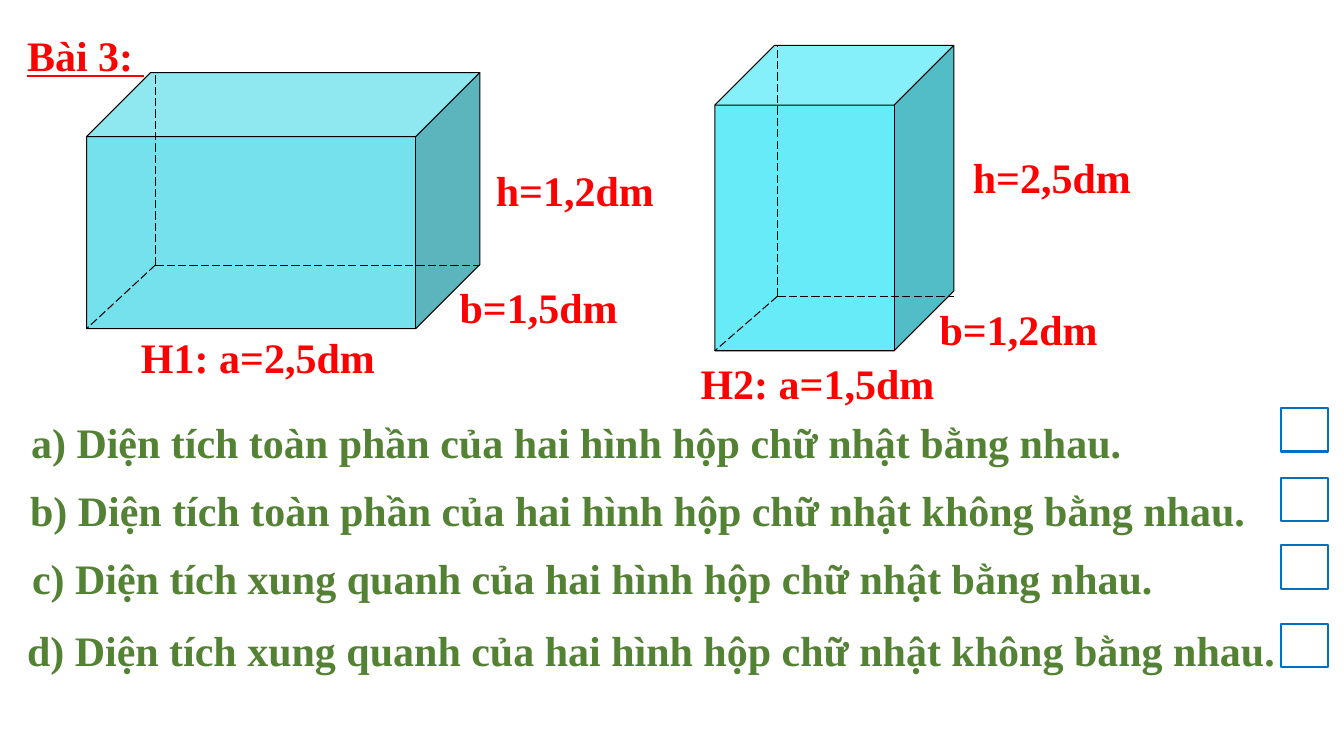
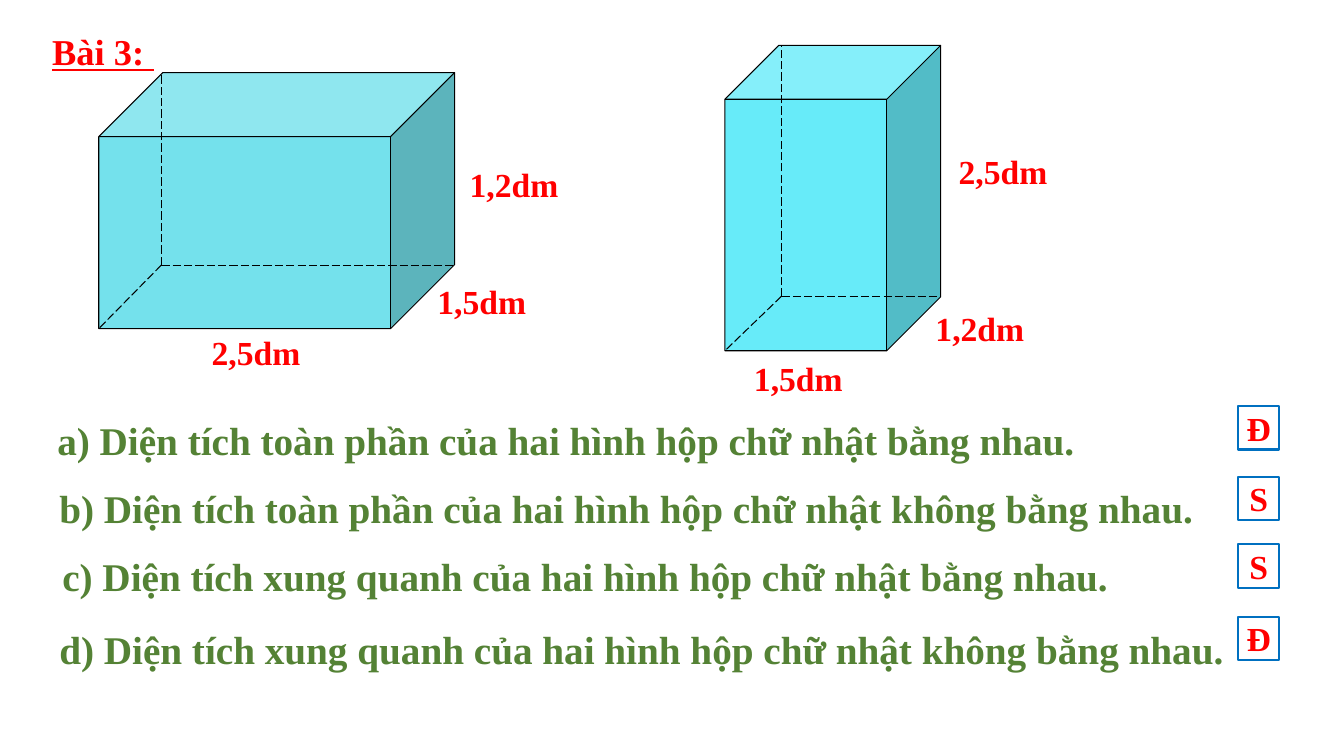
from dataclasses import dataclass

from lxml import etree
from pptx import Presentation
from pptx.dml.color import RGBColor
from pptx.enum import dml, shapes, text
from pptx.oxml import ns
from pptx.util import Inches, Pt

FONT = "Times New Roman"
RED, GREEN, BLUE, BLACK = "FF0000", "548235", "0070C0", "000000"
AQUA, CYAN = "74E1EC", "67EBF9"
INSET = 0.05
BOX_HEIGHT = 0.43

STATEMENTS = (
    "a) Diện tích toàn phần của hai hình hộp chữ nhật bằng nhau.",
    "b) Diện tích toàn phần của hai hình hộp chữ nhật không bằng nhau.",
    "c) Diện tích xung quanh của hai hình hộp chữ nhật bằng nhau.",
    "d) Diện tích xung quanh của hai hình hộp chữ nhật không bằng nhau.",
)
STATEMENT_TOPS = (4.08, 4.76, 5.43, 6.15)


@dataclass(frozen=True)
class Label:
    text: str
    left: float
    top: float
    width: float


@dataclass(frozen=True)
class Cuboid:
    left: float
    top: float
    width: float
    height: float
    fill: str
    hidden_x: float
    hidden_y: float
    labels: tuple[Label, ...]


@dataclass(frozen=True)
class Exercise:
    title: Label
    title_size: int
    label_size: int
    statement_size: int
    statement_lefts: tuple[float, ...]
    statement_width: float
    cuboids: tuple[Cuboid, ...]
    box_left: float
    box_width: float
    box_tops: tuple[float, ...]
    answers: tuple[str, ...]


QUESTION = Exercise(
    title=Label("Bài 3: ", 0.17, 0.24, 10.68),
    title_size=30,
    label_size=30,
    statement_size=30,
    statement_lefts=(0.21, 0.2, 0.22, 0.17),
    statement_width=12.7,
    cuboids=(
        Cuboid(7.09, 0.45, 2.37, 3.03, CYAN, 7.71, 2.94, (
            Label("h=2,5dm", 9.55, 1.45, 1.77),
            Label("H2: a=1,5dm", 6.85, 3.5, 2.93),
            Label("b=1,2dm", 9.22, 2.96, 2.03),
        )),
        Cuboid(0.86, 0.72, 3.9, 2.54, AQUA, 1.54, 2.63, (
            Label("h=1,2dm", 4.82, 1.58, 1.8),
            Label("H1: a=2,5dm", 1.3, 3.24, 2.85),
            Label("b=1,5dm", 4.46, 2.74, 1.91),
        )),
    ),
    box_left=12.71,
    box_width=0.46,
    box_tops=(4.05, 4.74, 5.41, 6.19),
    answers=("", "", "", ""),
)

SOLUTION = Exercise(
    title=Label("Bài 3: ", 0.42, 0.24, 9.67),
    title_size=26,
    label_size=24,
    statement_size=28,
    statement_lefts=(0.47, 0.49, 0.52, 0.49),
    statement_width=11.8,
    cuboids=(
        Cuboid(7.19, 0.45, 2.14, 3.03, CYAN, 7.75, 2.94, (
            Label("2,5dm", 9.41, 1.45, 1.6),
            Label("1,5dm", 7.38, 3.5, 1.17),
            Label("1,2dm", 9.18, 3.01, 1.17),
        )),
        Cuboid(0.98, 0.72, 3.53, 2.54, AQUA, 1.6, 2.63, (
            Label("1,2dm", 4.56, 1.58, 1.17),
            Label("2,5dm", 2, 3.24, 1.2),
            Label("1,5dm", 4.24, 2.74, 1.17),
        )),
    ),
    box_left=12.28,
    box_width=0.41,
    box_tops=(4.03, 4.73, 5.4, 6.12),
    answers=("Đ", "S", "S", "Đ"),
)


def rgb(color: str) -> RGBColor:
    return RGBColor.from_string(color)


def add_run(p, content: str, size: int, color: str, underline: bool = False) -> None:
    r = p.add_run()
    r.text = content
    r.font.name = FONT
    r.font.size = Pt(size)
    r.font.bold = True
    r.font.underline = underline or None
    r.font.color.rgb = rgb(color)


def add_label(parent, label: Label, size: int, color: str = RED,
              underline: bool = False) -> None:
    """Add a one-line text box whose height follows from the font size."""
    height = size * 1.2 / 72 + 2 * INSET
    sp = parent.add_textbox(Inches(label.left), Inches(label.top),
                            Inches(label.width), Inches(height))
    tf = sp.text_frame
    tf.word_wrap = True
    tf.auto_size = text.MSO_AUTO_SIZE.SHAPE_TO_FIT_TEXT
    add_run(tf.paragraphs[0], label.text, size, color, underline)


def add_hidden_edge(parent, start: tuple[float, float], end: tuple[float, float]) -> None:
    line = parent.add_connector(shapes.MSO_CONNECTOR.STRAIGHT,
                                *(Inches(v) for v in (*start, *end)))
    line.line.color.rgb = rgb(BLACK)
    line.line.width = Pt(0.75)
    line.line.dash_style = dml.MSO_LINE.LONG_DASH
    etree.SubElement(line._element.spPr, ns.qn("a:effectLst"))


def add_cuboid(slide, cuboid: Cuboid, label_size: int) -> None:
    """Group a cube with its three hidden edges and its measurements."""
    parent = slide.shapes.add_group_shape().shapes
    sp = parent.add_shape(shapes.MSO_SHAPE.CUBE, Inches(cuboid.left), Inches(cuboid.top),
                          Inches(cuboid.width), Inches(cuboid.height))
    sp.adjustments[0] = 0.25
    sp.shadow.inherit = False
    sp.fill.solid()
    sp.fill.fore_color.rgb = rgb(cuboid.fill)
    sp.line.color.rgb = rgb(BLACK)
    sp.line.width = Pt(0.75)

    corner = (cuboid.hidden_x, cuboid.hidden_y)
    for end in (
        (cuboid.left, cuboid.top + cuboid.height),
        (cuboid.hidden_x, cuboid.top),
        (cuboid.left + cuboid.width, cuboid.hidden_y),
    ):
        add_hidden_edge(parent, corner, end)
    for label in cuboid.labels:
        add_label(parent, label, label_size)


def add_answer_box(slide, left: float, top: float, width: float, answer: str) -> None:
    sp = slide.shapes.add_shape(shapes.MSO_SHAPE.RECTANGLE, Inches(left), Inches(top),
                                Inches(width), Inches(BOX_HEIGHT))
    sp.shadow.inherit = False
    sp.fill.background()
    sp.line.color.rgb = rgb(BLUE)
    sp.line.width = Pt(1.5)
    if answer:
        tf = sp.text_frame
        tf.margin_left = tf.margin_right = tf.margin_top = tf.margin_bottom = 0
        tf.vertical_anchor = text.MSO_ANCHOR.MIDDLE
        p = tf.paragraphs[0]
        p.alignment = text.PP_ALIGN.CENTER
        add_run(p, answer, 24, RED)


def add_exercise(prs, exercise: Exercise) -> None:
    slide = prs.slides.add_slide(prs.slide_layouts[6])
    add_label(slide.shapes, exercise.title, exercise.title_size, underline=True)
    for statement, left, top in zip(STATEMENTS, exercise.statement_lefts, STATEMENT_TOPS):
        add_label(slide.shapes, Label(statement, left, top, exercise.statement_width),
                  exercise.statement_size, GREEN)
    for cuboid in exercise.cuboids:
        add_cuboid(slide, cuboid, exercise.label_size)
    for top, answer in zip(exercise.box_tops, exercise.answers):
        add_answer_box(slide, exercise.box_left, top, exercise.box_width, answer)


def main() -> None:
    prs = Presentation()
    prs.slide_width, prs.slide_height = Inches(13.33), Inches(7.5)
    for exercise in (QUESTION, SOLUTION):
        add_exercise(prs, exercise)
    prs.save("out.pptx")


if __name__ == "__main__":
    main()
